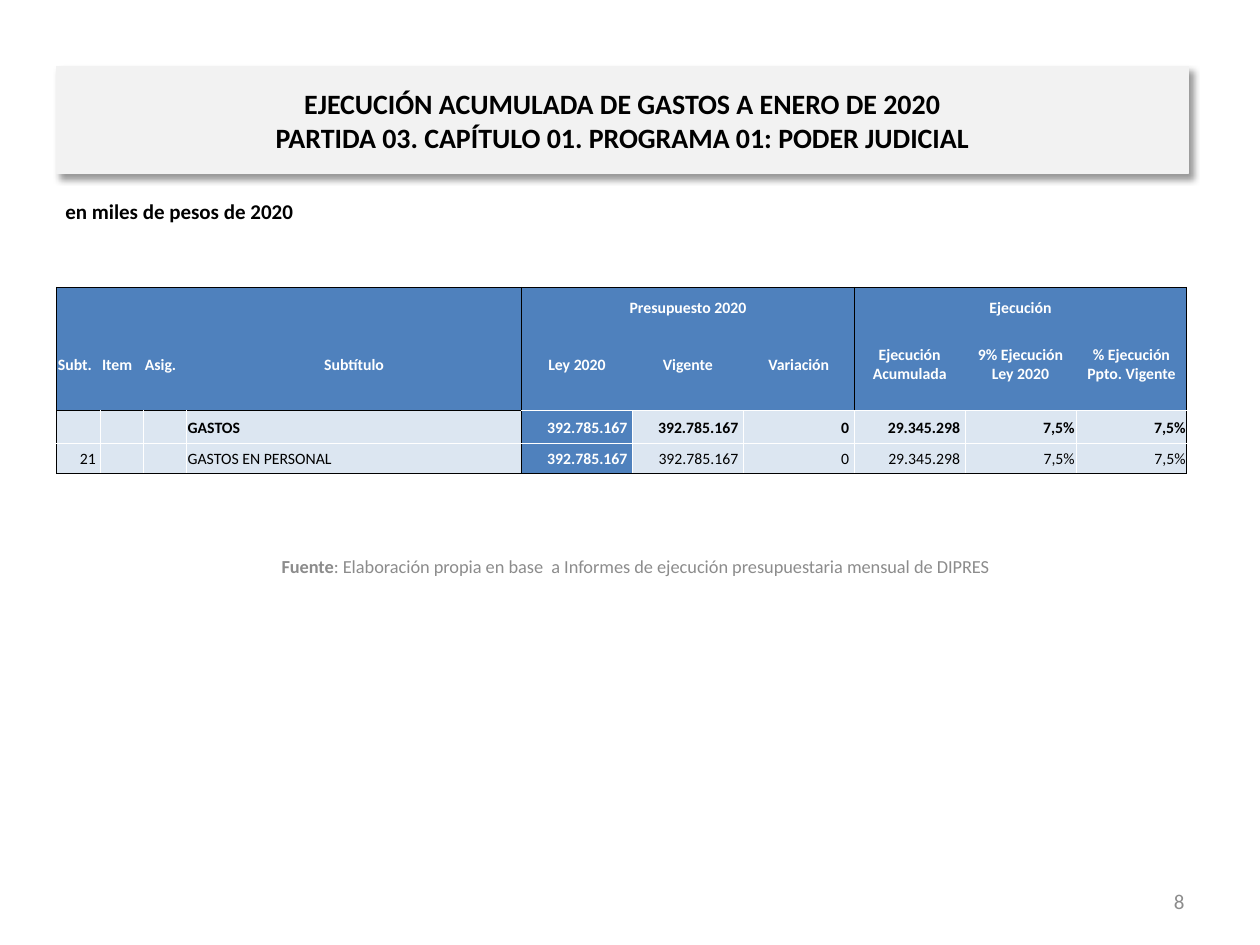
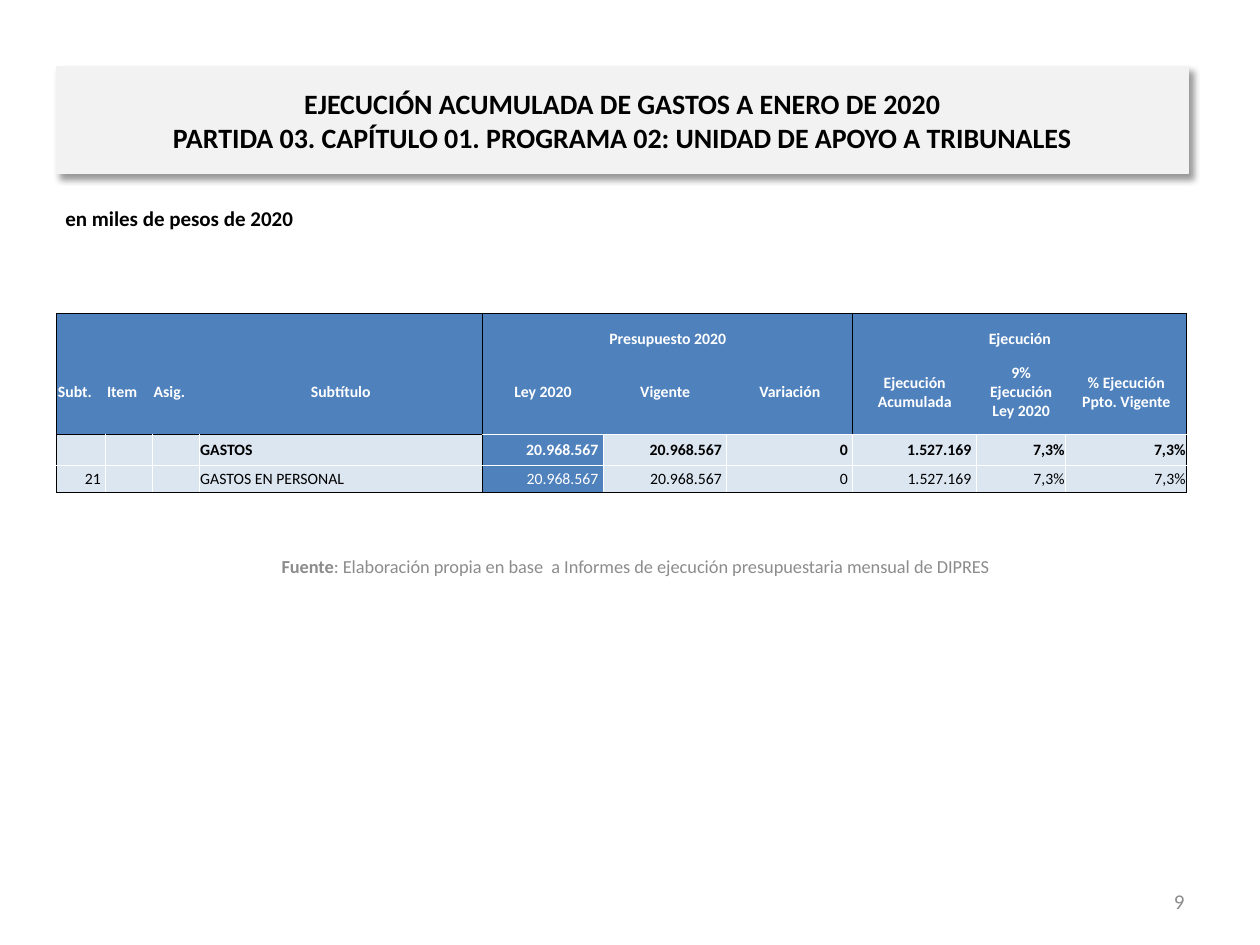
from dataclasses import dataclass

from lxml import etree
from pptx import Presentation
from pptx import util as u
from pptx.dml.color import RGBColor
from pptx.enum import shapes, text
from pptx.oxml.ns import qn


@dataclass(frozen=True)
class Theme:
    font: str = "Calibri"
    black: str = "000000"
    white: str = "FFFFFF"
    gray: str = "8C8C8C"
    band: str = "F2F2F2"
    header: str = "4F81BD"
    body: str = "DCE6F1"
    title_size: float = 16
    note_size: float = 12
    source_size: float = 10.5
    cell_size: float = 9
    border: float = 0.5


T = Theme()
GRID_COLS, GRID_ROWS = 100, 75
SLIDE_W, SLIDE_H = u.Inches(10), u.Inches(7.5)
LEFT, CENTER, RIGHT = text.PP_ALIGN.LEFT, text.PP_ALIGN.CENTER, text.PP_ALIGN.RIGHT
MIDDLE, TOP, BOTTOM = text.MSO_ANCHOR.MIDDLE, text.MSO_ANCHOR.TOP, text.MSO_ANCHOR.BOTTOM

HEADINGS = ["Subt.", "Item", "Asig.", "Subtítulo", "Ley 2020", "Vigente", "Variación",
            "Ejecución Acumulada", "9% Ejecución Ley 2020", "% Ejecución Ppto. Vigente"]
GROUPS = {4: "Presupuesto 2020", 7: "Ejecución"}
GROUP_SPAN = 3
HEADER_ROWS = 2
NAME_COL, LAW_COL, PERCENT_COL = 3, 4, 8

PROGRAMS = [
    dict(number=8, name="PROGRAMA 01: PODER JUDICIAL", unit_row=15.3, table_row=22.8,
         cols=[3.5, 3.4, 3.4, 26.6] + [8.8] * 6, rows=[2.4, 7.4, 2.6, 2.4],
         figures=["392.785.167", "392.785.167", "0", "29.345.298", "7,5%", "7,5%"],
         bold_law=True),
    dict(number=9, name="PROGRAMA 02: UNIDAD DE APOYO A TRIBUNALES", unit_row=15.8, table_row=24.9,
         cols=[3.9, 3.7, 3.7, 22.5, 9.6, 9.8, 10, 9.8, 7.1, 9.6], rows=[2.8, 6.8, 2.4, 2.2],
         figures=["20.968.567", "20.968.567", "0", "1.527.169", "7,3%", "7,3%"],
         bold_law=False),
]


def across(n):
    return round(SLIDE_W * n / GRID_COLS)


def down(n):
    return round(SLIDE_H * n / GRID_ROWS)


def place(col, row, cols, rows):
    return across(col), down(row), across(cols), down(rows)


def style(p, size, color, bold=False, align=LEFT):
    p.alignment = align
    p.font.name, p.font.size, p.font.bold = T.font, u.Pt(size), bold
    p.font.color.rgb = RGBColor.from_string(color)


def add_text(s, area, content, size, color, bold=False, align=LEFT, anchor=MIDDLE):
    tf = s.shapes.add_textbox(*place(*area)).text_frame
    tf.word_wrap, tf.vertical_anchor = True, anchor
    p = tf.paragraphs[0]
    p.text = content
    style(p, size, color, bold, align)
    return p


def add_source(s):
    p = add_text(s, (4.5, 42.9, 91.9, 4), "Fuente", T.source_size, T.gray, align=CENTER)
    p.runs[0].font.bold = True
    r = p.add_run()
    r.text = ": Elaboración propia en base  a Informes de ejecución presupuestaria mensual de DIPRES"


def add_title(s, program_name):
    sp = s.shapes.add_shape(shapes.MSO_SHAPE.RECTANGLE, *place(4.5, 5.3, 89.8, 8.5))
    sp.fill.solid()
    sp.fill.fore_color.rgb = sp.line.color.rgb = RGBColor.from_string(T.band)
    sp.line.width = u.Pt(0.75)
    sp.shadow.inherit = False
    effects = sp._element.spPr.find(qn("a:effectLst"))
    shadow = etree.SubElement(effects, qn("a:outerShdw"), blurRad=str(u.Pt(4)),
                              dist=str(u.Pt(3)), dir="2700000", algn="tl", rotWithShape="0")
    color = etree.SubElement(shadow, qn("a:srgbClr"), val=T.black)
    etree.SubElement(color, qn("a:alpha"), val="40000")
    tf = sp.text_frame
    tf.word_wrap, tf.vertical_anchor = True, MIDDLE
    p = tf.paragraphs[0]
    p.text = f"EJECUCIÓN ACUMULADA DE GASTOS A ENERO DE 2020\vPARTIDA 03. CAPÍTULO 01. {program_name}"
    style(p, T.title_size, T.black, True, CENTER)


def vertical_rule(row, col):
    in_header = row < HEADER_ROWS
    if col in (0, LAW_COL, len(HEADINGS)) or (col in GROUPS and in_header):
        return T.black
    return None if in_header else T.white


def horizontal_rule(row, col, last):
    if row in (0, last) or (row == HEADER_ROWS and col <= NAME_COL):
        return T.black
    return T.white if row >= HEADER_ROWS else None


def set_borders(cell, row, col, last):
    span = cell.span_width if cell.is_merge_origin else 1
    edges = {"L": vertical_rule(row, col), "R": vertical_rule(row, col + span),
             "T": horizontal_rule(row, col, last), "B": horizontal_rule(row + 1, col, last)}
    tc_pr = cell._tc.get_or_add_tcPr()
    for side, color in edges.items():
        ln = etree.SubElement(tc_pr, qn(f"a:ln{side}"), w=str(u.Pt(T.border)))
        if color:
            fill = etree.SubElement(ln, qn("a:solidFill"))
            etree.SubElement(fill, qn("a:srgbClr"), val=color)
        else:
            etree.SubElement(ln, qn("a:noFill"))


def cell_align(row, col):
    if row < HEADER_ROWS:
        return LEFT if col < NAME_COL else CENTER
    return LEFT if col == NAME_COL else RIGHT


def fill_cell(cell, row, col, content, bold):
    dark = row < HEADER_ROWS or col == LAW_COL
    align = cell_align(row, col)
    cell.fill.solid()
    cell.fill.fore_color.rgb = RGBColor.from_string(T.header if dark else T.body)
    cell.vertical_anchor = BOTTOM if row == 0 else MIDDLE
    padded = align == RIGHT and col < PERCENT_COL
    cell.margin_left = u.Inches(0.03 if align == CENTER else 0.01)
    cell.margin_right = u.Inches(0.04 if padded else 0.03 if align == CENTER else 0.01)
    cell.margin_top, cell.margin_bottom = u.Inches(0.01), 0
    p = cell.text_frame.paragraphs[0]
    p.text = content
    style(p, T.cell_size, T.white if dark else T.black, bold, align)
    if not content:
        p._p.get_or_add_endParaRPr().set("sz", str(T.cell_size * 100))


def add_budget_table(s, program):
    cols, rows, figures = program["cols"], program["rows"], program["figures"]
    area = place(4.5, program["table_row"], sum(cols), sum(rows))
    table = s.shapes.add_table(len(rows), len(cols), *area).table
    table.first_row = table.horz_banding = False
    for column, width in zip(table.columns, cols):
        column.width = across(width)
    for line, height in zip(table.rows, rows):
        line.height = down(height)
    for col in GROUPS:
        table.cell(0, col).merge(table.cell(0, col + GROUP_SPAN - 1))
    contents = [[GROUPS.get(col, "") for col in range(len(cols))], HEADINGS,
                ["", "", "", "GASTOS"] + figures,
                ["21", "", "", "GASTOS EN PERSONAL"] + figures]
    last = len(rows)
    for row, values in enumerate(contents):
        for col, content in enumerate(values):
            cell = table.cell(row, col)
            bold = row < last - 1 or (col == LAW_COL and program["bold_law"])
            set_borders(cell, row, col, last)
            fill_cell(cell, row, col, content, bold)


def add_program_slide(prs, program):
    s = prs.slides.add_slide(prs.slide_layouts[6])
    add_source(s)
    add_text(s, (71.7, 69.5, 23.3, 4), str(program["number"]), T.note_size, T.gray, align=RIGHT)
    add_text(s, (4.2, program["unit_row"], 90, 5), "en miles de pesos de 2020",
             T.note_size, T.black, bold=True, anchor=TOP)
    add_title(s, program["name"])
    add_budget_table(s, program)


def main():
    prs = Presentation()
    prs.slide_width, prs.slide_height = SLIDE_W, SLIDE_H
    for program in PROGRAMS:
        add_program_slide(prs, program)
    prs.save("out.pptx")


if __name__ == "__main__":
    main()
